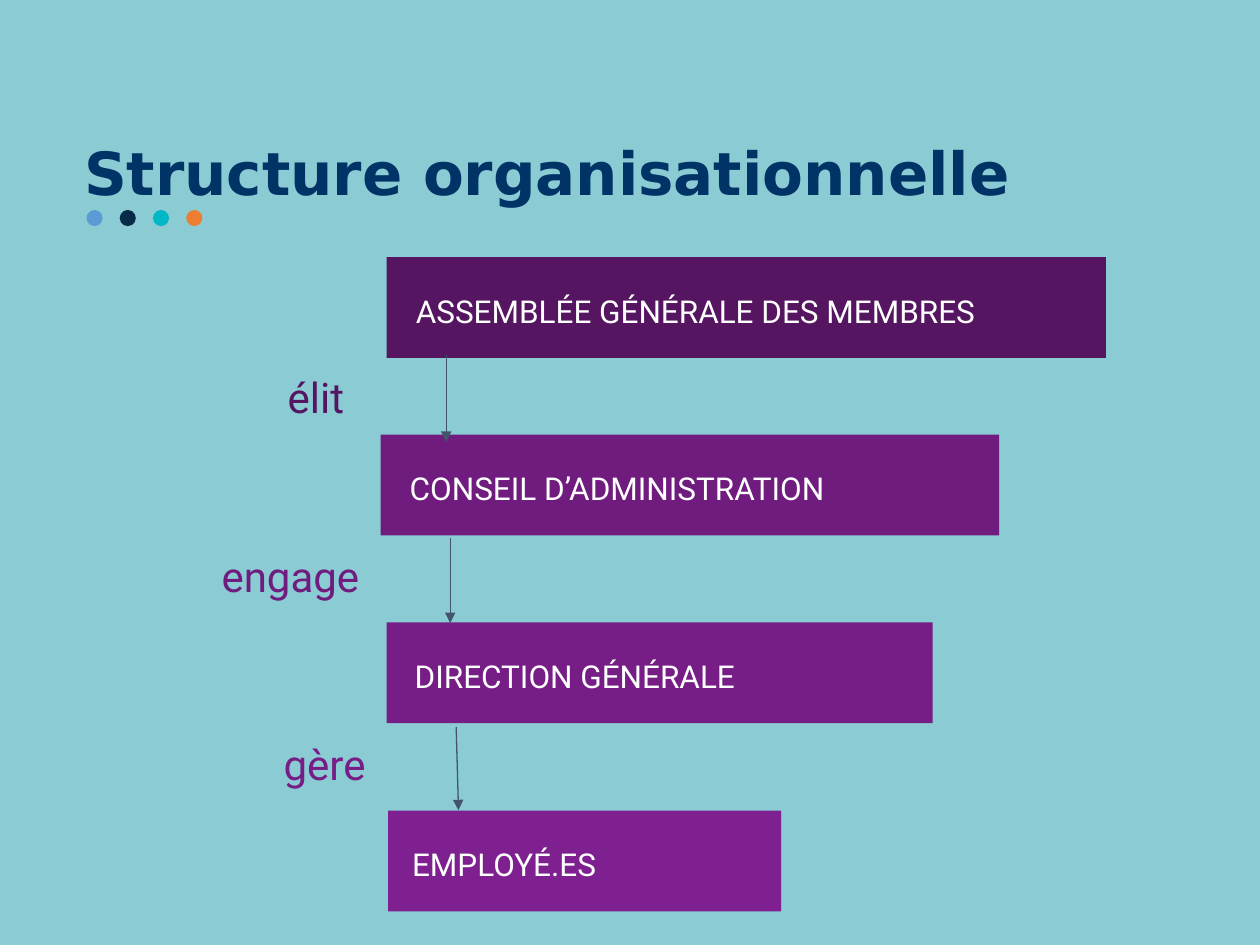
from lxml import etree
from pptx import Presentation
from pptx import util as u
from pptx.dml.color import RGBColor
from pptx.enum import shapes, text
from pptx.oxml.ns import qn

Pt = u.Pt

# Content
COLORS = {
    "background": "8BCBD4", "title": "003366", "arrow": "44546A", "white": "FFFFFF",
    "blue": "5B9BD5", "navy": "082B48", "teal": "00B7C5", "orange": "ED7D31",
    "assembly": "551561", "board": "701C7F", "management": "761E86", "staff": "7F2090",
}
TITLE = "Structure organisationnelle"
DOTS = ["blue", "navy", "teal", "orange"]
# text, colour, left, top, width, left inset
LEVELS = [
    ("ASSEMBLÉE GÉNÉRALE DES MEMBRES", "assembly", 221, 147, 411, 16.6),
    ("CONSEIL D’ADMINISTRATION", "board", 217.5, 248.4, 353.5, 16.6),
    ("DIRECTION GÉNÉRALE", "management", 221, 355.7, 312, 16),
    ("EMPLOYÉ.ES", "staff", 221.8, 463.2, 224.6, 13.7),
]
LEVEL_HEIGHT = 57.6
# text, colour, left, top, width, (left, top, right, bottom) insets
LABELS = [
    ("élit", "assembly", 51, 198.7, 164.2, (7.2, 13.6, 18.6, 3.6)),
    ("engage", "board", 46.8, 306, 165.6, (7.2, 3.6, 7.2, 3.6)),
    ("gère", "management", 100.8, 413.3, 115.2, (7.2, 3.6, 7.2, 3.6)),
]
LABEL_HEIGHT = 49.7
ARROWS = [
    (255, 203, 255, 252.5),
    (257.3, 307.5, 257.3, 356),
    (260.7, 415.5, 262, 463),
]

# Text formats
TITLE_FORMAT = {"name": "DejaVu Sans", "size": Pt(34), "bold": True}
LABEL_FORMAT = {"name": "Roboto", "size": Pt(24)}
LEVEL_FORMAT = {"name": "Roboto", "size": Pt(18)}


def color(name):
    return RGBColor.from_string(COLORS[name])


def write(shape, words, color_name, font_format, insets, spacing,
          anchor=text.MSO_ANCHOR.MIDDLE, align=text.PP_ALIGN.LEFT):
    frame = shape.text_frame
    frame.word_wrap = True
    frame.vertical_anchor = anchor
    for side, inset in zip(("left", "top", "right", "bottom"), insets):
        setattr(frame, f"margin_{side}", Pt(inset))
    paragraph = frame.paragraphs[0]
    paragraph.alignment = align
    paragraph.line_spacing = spacing
    run = paragraph.add_run()
    run.text = words
    for attribute, value in font_format.items():
        setattr(run.font, attribute, value)
    run.font.color.rgb = color(color_name)


def add_filled(slide, kind, fill, *box):
    shape = slide.shapes.add_shape(kind, *map(Pt, box))
    shape.shadow.inherit = False
    shape.fill.solid()
    shape.fill.fore_color.rgb = color(fill)
    shape.line.fill.background()
    return shape


def add_arrow(slide, *ends):
    arrow = slide.shapes.add_connector(shapes.MSO_CONNECTOR.STRAIGHT, *map(Pt, ends))
    arrow.line.color.rgb = color("arrow")
    arrow.line.width = Pt(0.75)
    properties = arrow.element.spPr
    etree.SubElement(properties.find(qn("a:ln")), qn("a:tailEnd"), type="triangle")
    etree.SubElement(properties, qn("a:effectLst"))


def main():
    presentation = Presentation()
    presentation.slide_width, presentation.slide_height = Pt(720), Pt(540)
    slide = presentation.slides.add_slide(presentation.slide_layouts[6])
    slide.background.fill.solid()
    slide.background.fill.fore_color.rgb = color("background")

    # Row of dots under the title
    for index, fill in enumerate(DOTS):
        add_filled(slide, shapes.MSO_SHAPE.OVAL, fill, 49.4 + 19 * index, 120, 9.2, 9.2)

    # Levels of the organisation
    for words, fill, left, top, width, inset in LEVELS:
        level = add_filled(slide, shapes.MSO_SHAPE.RECTANGLE, fill,
                           left, top, width, LEVEL_HEIGHT)
        write(level, words, "white", LEVEL_FORMAT, (inset, 3.6, 7.2, 3.6), 1.15)

    # Verbs beside the arrows
    for words, color_name, left, top, width, insets in LABELS:
        label = slide.shapes.add_textbox(*map(Pt, (left, top, width, LABEL_HEIGHT)))
        write(label, words, color_name, LABEL_FORMAT, insets, 0.9,
              align=text.PP_ALIGN.RIGHT)

    # Title
    title = slide.shapes.add_textbox(Pt(41), Pt(50.4), Pt(567.4), Pt(62.6))
    write(title, TITLE, "title", TITLE_FORMAT, (7.2,) * 4, 1.5,
          anchor=text.MSO_ANCHOR.TOP)

    # Arrows between levels
    for ends in ARROWS:
        add_arrow(slide, *ends)

    presentation.save("out.pptx")


if __name__ == "__main__":
    main()
